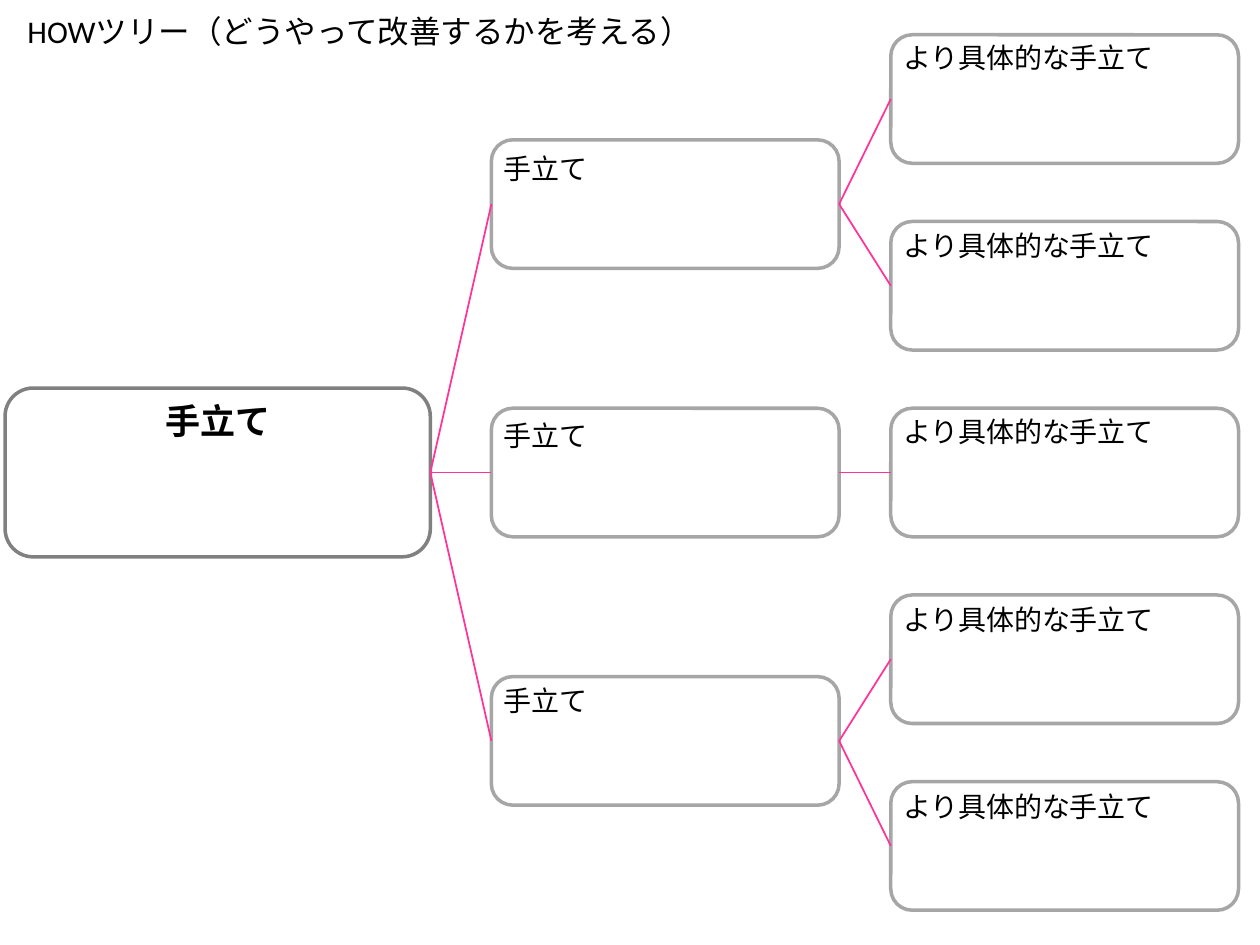
from pptx import Presentation
from pptx.dml.color import RGBColor
from pptx.enum.shapes import MSO_CONNECTOR, MSO_SHAPE
from pptx.enum.text import MSO_AUTO_SIZE, PP_ALIGN
from pptx.oxml.ns import qn
from pptx.util import Inches, Pt
from lxml.etree import SubElement

COLS, ROWS = 100, 75
GREY, SILVER, PINK, BLACK = "808080", "A6A6A6", "FF3399", "000000"


def color(text):
    return RGBColor.from_string(text)


class Board:
    """Draws on one slide; all lengths are columns and rows of the grid."""

    font = "Calibri"

    def __init__(self, deck):
        self.slide = deck.slides.add_slide(deck.slide_layouts[6])
        self.shapes = self.slide.shapes
        self.col = deck.slide_width / COLS
        self.row = deck.slide_height / ROWS

    def scale(self, x, y):
        return round(x * self.col), round(y * self.row)

    def box(self, left, top, width, height, line):
        shape = self.shapes.add_shape(
            MSO_SHAPE.ROUNDED_RECTANGLE,
            *self.scale(left, top), *self.scale(width, height))
        shape.shadow.inherit = False
        shape.fill.background()
        shape.line.color.rgb = color(line)
        shape.line.width = Pt(2)

    def link(self, start, end):
        line = self.shapes.add_connector(
            MSO_CONNECTOR.STRAIGHT, *self.scale(*start), *self.scale(*end))
        line.line.color.rgb = color(PINK)
        line.line.width = Pt(1)
        SubElement(line._element.spPr, qn("a:effectLst"))

    def label(self, text, left, top, width, height, size,
              align=PP_ALIGN.LEFT, bold=False):
        frame = self.shapes.add_textbox(
            *self.scale(left, top), *self.scale(width, height)).text_frame
        frame.text = text
        frame.word_wrap = True
        frame.auto_size = MSO_AUTO_SIZE.SHAPE_TO_FIT_TEXT
        para = frame.paragraphs[0]
        para.alignment = align
        font = para.runs[0].font
        font.name, font.size, font.bold = self.font, Pt(size), bold
        font.color.rgb = color(BLACK)


def main():
    deck = Presentation()
    deck.slide_width, deck.slide_height = Inches(10), Inches(7.5)
    board = Board(deck)

    middle = ROWS / 2
    root_x, root_w, root_h = 0.4, 33.75, 13.4
    step_x, leaf_x, wide, high = 39, 70.7, 27.6, 10.2
    step_gap, leaf_gap = 21.3, 14.82
    # How far each label sits below the top of its box
    step_drops = [0.4, 0.3, 0.1]
    leaf_drops = [0, 0.1, 0, 0.1, 0.1]
    parents = [0, 0, 1, 2, 2]

    step_rows = [middle + (i - 1) * step_gap for i in range(3)]
    leaf_rows = [middle + (i - 2) * leaf_gap for i in range(5)]
    levels = [
        ("手立て", step_x, step_rows, step_drops),
        ("より具体的な手立て", leaf_x, leaf_rows, leaf_drops),
    ]

    board.box(root_x, middle - root_h / 2, root_w, root_h, GREY)
    for _, left, rows, _ in levels:
        for y in rows:
            board.box(left, y - high / 2, wide, high, SILVER)

    for y in step_rows:
        board.link((step_x, y), (root_x + root_w, middle))
    for y, parent in zip(leaf_rows, parents):
        board.link((leaf_x, y), (step_x + wide, step_rows[parent]))

    board.label("手立て", root_x, middle - root_h / 2 + 0.4, root_w, 4.4,
                20, PP_ALIGN.CENTER, True)
    for text, left, rows, drops in levels:
        for y, drop in zip(rows, drops):
            board.label(text, left, y - high / 2 + drop, wide, 3.7, 16)
    board.label("HOWツリー（どうやって改善するかを考える）",
                1.2, 0.5, 60.6, 4, 18)

    deck.save("out.pptx")


if __name__ == "__main__":
    main()
